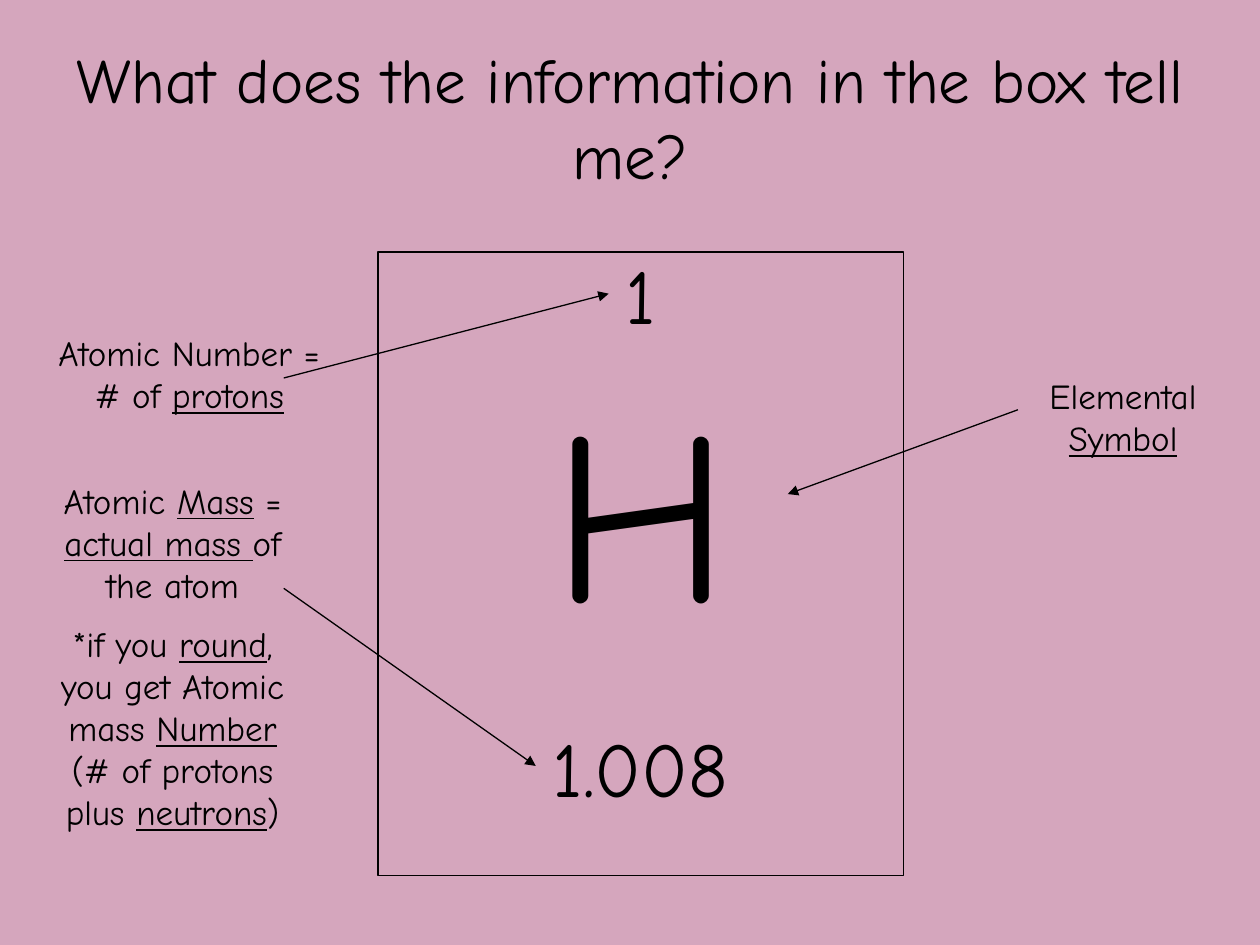
from lxml import etree
from pptx import Presentation
from pptx.dml.color import RGBColor
from pptx.enum.shapes import MSO_CONNECTOR as CONN, MSO_SHAPE as SHAPE
from pptx.enum.text import MSO_ANCHOR as ANCHOR, PP_ALIGN as ALIGN
from pptx.oxml.ns import qn
from pptx.util import Cm, Pt

FONT, INK, PINK = "Comic Neue", "000000", "D5A6BD"

# Content: lengths in cm, underlined words between underscores
TITLE = "What does the information in the box tell me?"
TITLE_AT = (1.27, 0.76, 22.86, 3.18)
BOX_AT = (7.62, 5.08, 10.59, 12.57)
BOX_LINES = [("1", 44, 0), ("H", 140, 28), ("1.008", 44, 43.5)]  # text, size, space before
LABELS = [
    ((0.64, 6.55, 6.35, 1.96), ["Atomic Number = # of _protons_"]),
    ((0.84, 9.53, 5.28, 8.38), [
        "Atomic _Mass_ = _actual mass _of the atom",
        "*if you _round_, you get Atomic mass _Number_ (# of protons plus _neutrons_)",
    ]),
    ((20.52, 7.42, 4.24, 1.96), ["Elemental _Symbol_"]),
]
ARROWS = [
    (5.72, 7.62, 12.27, 5.92),
    (5.72, 11.86, 10.8, 15.44),
    (20.52, 8.26, 15.88, 9.96),
]


def color(hex_code):
    return RGBColor.from_string(hex_code)


def cm(values):
    return [Cm(v) for v in values]


def write(p, text, size=20, before=0, spacing=1.0):
    p.alignment = ALIGN.CENTER
    p.space_before, p.line_spacing = Pt(before), spacing
    for i, part in enumerate(text.split("_")):
        if part:
            r = p.add_run()
            r.text = part
            r.font.name, r.font.size = FONT, Pt(size)
            r.font.color.rgb = color(INK)
            r.font.underline = i % 2 == 1


def setup(tf, anchor=ANCHOR.TOP):
    tf.word_wrap, tf.vertical_anchor = True, anchor
    tf.margin_left = tf.margin_right = Cm(0.25)
    tf.margin_top = tf.margin_bottom = Cm(0.13)
    return tf


def paragraph(tf, i):
    return tf.add_paragraph() if i else tf.paragraphs[0]


prs = Presentation()
prs.slide_width, prs.slide_height = Cm(25.4), Cm(19.05)
s = prs.slides.add_slide(prs.slide_layouts[5])
s.background.fill.solid()
s.background.fill.fore_color.rgb = color(PINK)

# Title
title = s.shapes.title
title.left, title.top, title.width, title.height = cm(TITLE_AT)
write(setup(title.text_frame, ANCHOR.MIDDLE).paragraphs[0], TITLE, size=36)

# Element box
box = s.shapes.add_shape(SHAPE.RECTANGLE, *cm(BOX_AT))
box.shadow.inherit = False
box.fill.background()
box.line.color.rgb, box.line.width = color(INK), Pt(0.75)
tf = setup(box.text_frame)
for i, (text, size, before) in enumerate(BOX_LINES):
    write(paragraph(tf, i), text, size=size, before=before, spacing=0.9)

# Labels
for at, texts in LABELS:
    tf = setup(s.shapes.add_textbox(*cm(at)).text_frame)
    for i, text in enumerate(texts):
        write(paragraph(tf, i), text, before=10 if i else 0)

# Arrows from labels into the box
for ends in ARROWS:
    arrow = s.shapes.add_connector(CONN.STRAIGHT, *cm(ends))
    arrow.line.color.rgb, arrow.line.width = color(INK), Pt(0.75)
    etree.SubElement(arrow.line._get_or_add_ln(), qn("a:tailEnd"), type="triangle")
    etree.SubElement(arrow._element.spPr, qn("a:effectLst"))

prs.save("out.pptx")
